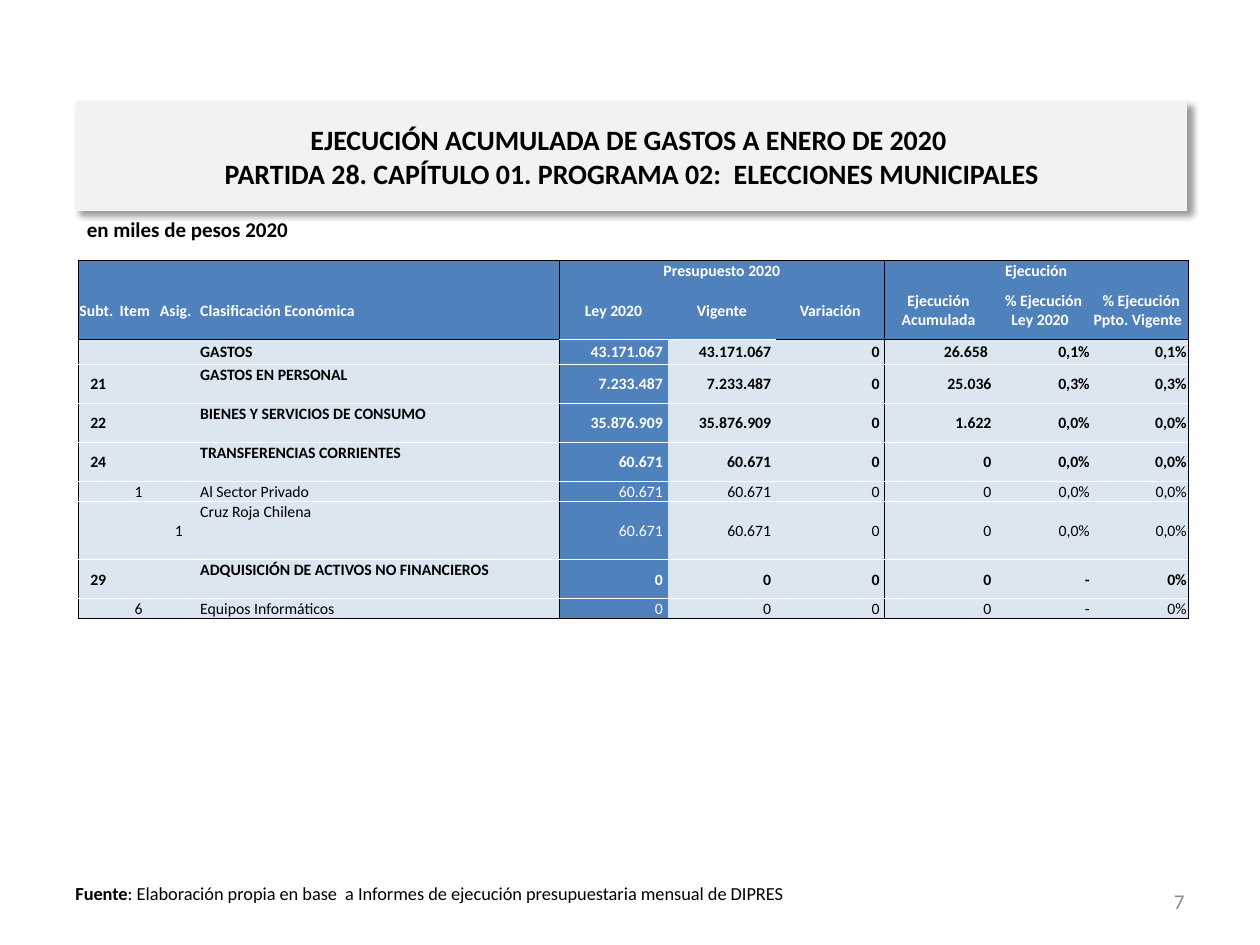
"""Builds the budget execution slide for the municipal elections programme."""
import lxml.etree
import pptx
import pptx.dml.color
import pptx.enum.text
import pptx.oxml
import pptx.oxml.ns
import pptx.util

Inches, Pt = pptx.util.Inches, pptx.util.Pt
ALIGN, ANCHOR = pptx.enum.text.PP_ALIGN, pptx.enum.text.MSO_ANCHOR
NS = 'xmlns:a="http://schemas.openxmlformats.org/drawingml/2006/main"'
qn = pptx.oxml.ns.qn

COLS = [0.32] * 3 + [2.86] + [0.86] * 4 + [0.78, 0.77]
HEIGHTS = [0.16, 0.46, 0.2, 0.31, 0.31, 0.31, 0.16, 0.46, 0.31, 0.16]
GROUPS = ["", "", "", "", "Presupuesto 2020", "", "", "Ejecución", "", ""]
HEADERS = ["Subt.", "Item", "Asig.", "Clasificación Económica", "Ley 2020", "Vigente", "Variación",
           "Ejecución Acumulada", " % Ejecución Ley 2020 ", " % Ejecución Ppto. Vigente "]
EXPENSES = [
    ("", "", "", "GASTOS", "43.171.067", "26.658 ", "0,1%", "0,1%"),
    ("21", "", "", "GASTOS EN PERSONAL", "7.233.487", "25.036", "0,3%", "0,3%"),
    ("22", "", "", "BIENES Y SERVICIOS DE CONSUMO", "35.876.909", "1.622", "0,0%", "0,0%"),
    ("24", "", "", "TRANSFERENCIAS CORRIENTES", "60.671", "0", "0,0%", "0,0%"),
    ("", "1", "", "Al Sector Privado", "60.671", "0", "0,0%", "0,0%"),
    ("", "", "1", "Cruz Roja Chilena", "60.671", "0", "0,0%", "0,0%"),
    ("29", "", "", "ADQUISICIÓN DE ACTIVOS NO FINANCIEROS", "0", "0", "-", "0%"),
    ("", "6", "", "Equipos Informáticos", "0", "0", "-", "0%"),
]


def rgb(value):
    """Turn a hex string into a colour."""
    return pptx.dml.color.RGBColor.from_string(value)


def horizontal_edge(boundary, c):
    """Give the colour of the line above row `boundary` in column c."""
    if boundary == 1:
        return None
    if boundary in (0, len(HEIGHTS)) or (boundary == 2 and c not in (4, 5)):
        return Deck.black
    return Deck.white


def vertical_edge(boundary):
    """Give the colour of the line left of column `boundary`."""
    return Deck.black if boundary in (0, 4, 7, 10) else None


class Deck:
    """Style and current slide, with a method for each kind of element."""
    font, black, white = "Calibri", "000000", "FFFFFF"
    blue, pale, gray = "4F81BD", "DCE6F1", "F2F2F2"

    def __init__(self):
        """Start a deck with one title-only slide."""
        self.prs = pptx.Presentation()
        self.prs.slide_width, self.prs.slide_height = Inches(10), Inches(7.5)
        self.s = self.prs.slides.add_slide(self.prs.slide_layouts[5])

    def format(self, r, size, color=black, bold=False):
        """Apply the font to a run."""
        r.font.name, r.font.size, r.font.bold = self.font, Pt(size), bold
        r.font.color.rgb = rgb(color)

    def title(self, text, box):
        """Place the title in a shaded panel."""
        sp = self.s.shapes.title
        sp.left, sp.top, sp.width, sp.height = map(Inches, box)
        sp.fill.solid()
        sp.fill.fore_color.rgb = sp.line.color.rgb = rgb(self.gray)
        sp.line.width = Pt(0.75)
        sp._element.spPr.append(pptx.oxml.parse_xml(
            f'<a:effectLst {NS}><a:outerShdw blurRad="50800" dist="38100" dir="2700000" '
            f'algn="tl" rotWithShape="0"><a:srgbClr val="{self.black}"><a:alpha val="40000"/>'
            '</a:srgbClr></a:outerShdw></a:effectLst>'))
        tf = sp.text_frame
        tf.text = text
        tf.auto_size = pptx.enum.text.MSO_AUTO_SIZE.NONE
        tf.vertical_anchor = ANCHOR.MIDDLE
        p = tf.paragraphs[0]
        p.alignment = ALIGN.CENTER
        for r in p.runs:
            self.format(r, 16, bold=True)

    def text(self, parts, box, size, color=black, align=ALIGN.LEFT, anchor=ANCHOR.TOP):
        """Add a text box from (text, bold) parts."""
        tf = self.s.shapes.add_textbox(*map(Inches, box)).text_frame
        tf.word_wrap, tf.vertical_anchor = True, anchor
        p = tf.paragraphs[0]
        p.alignment = align
        for text, bold in parts:
            r = p.add_run()
            r.text = text
            self.format(r, size, color, bold)

    def borders(self, cell, **edges):
        """Draw the four cell borders, leaving out those without colour."""
        tc_pr = cell._tc.get_or_add_tcPr()
        for side in "LRTB":
            ln = lxml.etree.SubElement(tc_pr, qn(f"a:ln{side}"), w="6350")
            if edges[side]:
                fill = lxml.etree.SubElement(ln, qn("a:solidFill"))
                lxml.etree.SubElement(fill, qn("a:srgbClr"), val=edges[side])
            else:
                lxml.etree.SubElement(ln, qn("a:noFill"))

    def cell(self, cell, text, fill, color, bold, align, anchor):
        """Fill and write one table cell."""
        cell.margin_left = cell.margin_right = cell.margin_top = Inches(0.01)
        cell.margin_bottom = 0
        cell.vertical_anchor = anchor
        cell.fill.solid()
        cell.fill.fore_color.rgb = rgb(fill)
        p = cell.text_frame.paragraphs[0]
        p.text, p.alignment = text, align
        for r in p.runs:
            self.format(r, 9, color, bold)
        if not text:
            lxml.etree.SubElement(p._p, qn("a:endParaRPr"), sz="900")

    def table(self, rows, left, top):
        """Add the budget table with its two header rows."""
        tbl = self.s.shapes.add_table(len(rows), len(COLS), Inches(left), Inches(top),
                                      Inches(sum(COLS)), Inches(sum(HEIGHTS))).table
        tbl.first_row = tbl.horz_banding = False
        for column, width in zip(tbl.columns, COLS):
            column.width = Inches(width)
        for row, height in zip(tbl.rows, HEIGHTS):
            row.height = Inches(height)
        for c in (4, 7):
            tbl.cell(0, c).merge(tbl.cell(0, c + 2))
        for i, row in enumerate(rows):
            for c, text in enumerate(row):
                cell = tbl.cell(i, c)
                self.borders(cell, L=vertical_edge(c), R=vertical_edge(c + cell.span_width),
                             T=horizontal_edge(i, c), B=horizontal_edge(i + 1, c))
                header = i < 2
                dark = header or c == 4
                anchor = ANCHOR.BOTTOM if i == 0 else ANCHOR.MIDDLE
                if header:
                    align = ALIGN.LEFT if c < 4 else ALIGN.CENTER
                else:
                    align = ALIGN.CENTER if c < 3 else ALIGN.JUSTIFY if c == 3 else ALIGN.RIGHT
                    if c == 3 and i > 2:
                        anchor = ANCHOR.TOP
                self.cell(cell, text, self.blue if dark else self.pale,
                          self.white if dark else self.black,
                          header or row[3].isupper(), align, anchor)


def main():
    """Build and save the slide."""
    deck = Deck()
    deck.text([("Fuente", True), (": Elaboración propia en base  a Informes de ejecución "
                                  "presupuestaria mensual de DIPRES", False)],
              (0.5, 6.95, 5.91, 0.28), 10.5)
    deck.title("EJECUCIÓN ACUMULADA DE GASTOS A ENERO DE 2020 \v"
               "PARTIDA 28. CAPÍTULO 01. PROGRAMA 02:  ELECCIONES MUNICIPALES",
               (0.61, 0.81, 8.81, 0.86))
    deck.text([("7", False)], (7.17, 6.95, 2.33, 0.4), 12, "8C8C8C", ALIGN.RIGHT, ANCHOR.MIDDLE)
    deck.text([("en miles de pesos 2020", True)], (0.59, 1.67, 8.81, 0.41), 12)
    body = [[*codes, name, f"{budget} ", f"{budget} ", "0 ", *spent]
            for *codes, name, budget, done, by_law, by_current in EXPENSES
            for spent in [(done, by_law, by_current)]]
    deck.table([GROUPS, HEADERS, *body], 0.62, 2.07)
    deck.prs.save("out.pptx")


if __name__ == "__main__":
    main()
